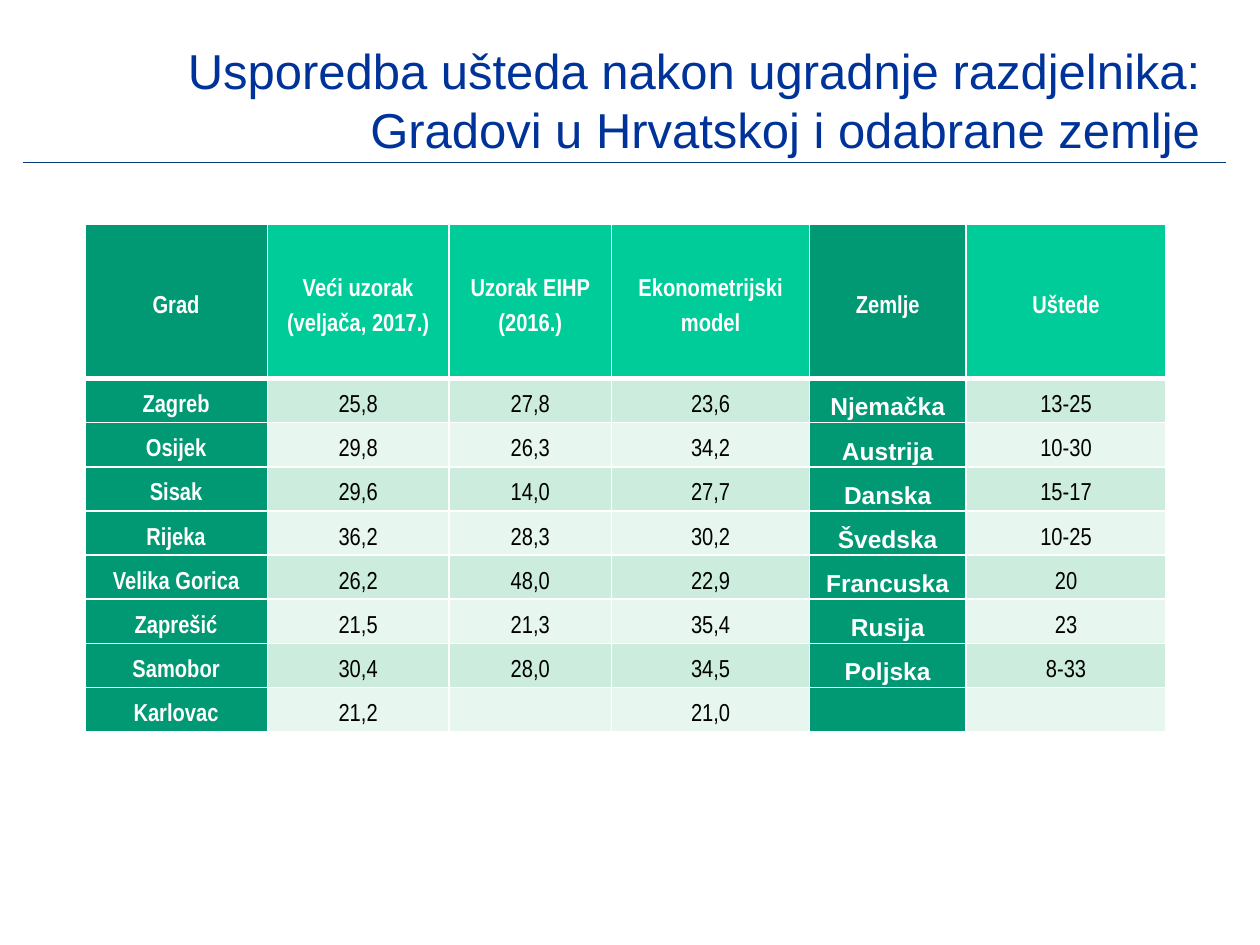
from dataclasses import dataclass

from lxml.etree import SubElement
from pptx import Presentation
from pptx.dml.color import RGBColor
from pptx.enum.shapes import MSO_CONNECTOR as Connector
from pptx.enum.text import MSO_ANCHOR as Anchor, MSO_AUTO_SIZE as AutoSize, PP_ALIGN as Align
from pptx.oxml import parse_xml
from pptx.oxml.ns import nsdecls, qn
from pptx.util import Cm, Pt

WHITE, BLACK = "FFFFFF", "000000"
DARK_GREEN, GREEN = "009973", "00CC99"
BANDS = ("CCECDE", "E7F6EF")
COUNTRY_COLUMN = 4
LABEL_COLUMNS = (0, COUNTRY_COLUMN)
COLUMN_WIDTHS = (3.68, 3.66, 3.28, 3.99, 3.15, 4.04)
HEADER_HEIGHT, ROW_HEIGHT = 3.1, 0.89
SAVINGS = (
    ("Grad", "Veći uzorak (veljača, 2017.)", "Uzorak EIHP (2016.)",
     "Ekonometrijski model", "Zemlje", "Uštede"),
    ("Zagreb", "25,8", "27,8", "23,6", "Njemačka", "13-25"),
    ("Osijek", "29,8", "26,3", "34,2", "Austrija", "10-30"),
    ("Sisak", "29,6", "14,0", "27,7", "Danska", "15-17"),
    ("Rijeka", "36,2", "28,3", "30,2", "Švedska", "10-25"),
    ("Velika Gorica", "26,2", "48,0", "22,9", "Francuska", "20"),
    ("Zaprešić", "21,5", "21,3", "35,4", "Rusija", "23"),
    ("Samobor", "30,4", "28,0", "34,5", "Poljska", "8-33"),
    ("Karlovac", "21,2", "", "21,0", "", ""),
)


@dataclass(frozen=True)
class CellStyle:
    fill: str
    color: str
    bold: bool
    font: str
    bottom: int


def rgb(value: str) -> RGBColor:
    return RGBColor.from_string(value)


def apply(target, values: dict) -> None:
    for name, value in values.items():
        setattr(target, name, value)


def format_font(font, name: str, size: int, color: str, bold: bool) -> None:
    apply(font, {"name": name, "size": Pt(size), "bold": bold})
    font.color.rgb = rgb(color)


def cell_style(row: int, column: int) -> CellStyle:
    header, label = row == 0, column in LABEL_COLUMNS
    strong = header or label
    plain_fill = GREEN if header else BANDS[(row - 1) % 2]
    return CellStyle(
        fill=DARK_GREEN if label else plain_fill,
        color=WHITE if strong else BLACK,
        bold=strong,
        font="Arial" if column == COUNTRY_COLUMN and not header else "Arial Narrow",
        bottom=3 if header else 1,
    )


def add_borders(cell, top: int, bottom: int) -> None:
    properties = cell._tc.get_or_add_tcPr()
    sides = (("lnL", 1), ("lnR", 1), ("lnT", top), ("lnB", bottom))
    for index, (side, width) in enumerate(sides):
        properties.insert(index, parse_xml(
            f'<a:{side} {nsdecls("a")} w="{Pt(width)}"><a:solidFill>'
            f'<a:srgbClr val="{WHITE}"/></a:solidFill></a:{side}>'))


def fill_cell(cell, text: str, style: CellStyle, top: int) -> None:
    apply(cell, {"margin_left": Cm(0.18), "margin_right": Cm(0.18),
                 "margin_top": 0, "margin_bottom": 0,
                 "vertical_anchor": Anchor.MIDDLE})
    cell.fill.solid()
    cell.fill.fore_color.rgb = rgb(style.fill)
    add_borders(cell, top, style.bottom)
    if text:
        paragraph = cell.text_frame.paragraphs[0]
        apply(paragraph, {"alignment": Align.CENTER, "line_spacing": 1.5})
        run = paragraph.add_run()
        run.text = text
        format_font(run.font, style.font, 14, style.color, style.bold)


def add_savings_table(slide) -> None:
    height = HEADER_HEIGHT + ROW_HEIGHT * (len(SAVINGS) - 1)
    table = slide.shapes.add_table(
        len(SAVINGS), len(COLUMN_WIDTHS), Cm(1.71), Cm(4.53),
        Cm(sum(COLUMN_WIDTHS)), Cm(height)).table
    for column, width in zip(table.columns, COLUMN_WIDTHS):
        column.width = Cm(width)
    for row_index, texts in enumerate(SAVINGS):
        table.rows[row_index].height = Cm(ROW_HEIGHT if row_index else HEADER_HEIGHT)
        for column_index, text in enumerate(texts):
            fill_cell(table.cell(row_index, column_index), text,
                      cell_style(row_index, column_index),
                      3 if row_index == 1 else 1)


def add_title(slide, text: str) -> None:
    title = slide.shapes.title
    apply(title, {"left": Cm(0.89), "top": Cm(0.71), "width": Cm(23.55), "height": Cm(2.59)})
    frame = title.text_frame
    apply(frame, {"word_wrap": True, "auto_size": AutoSize.NONE,
                  "vertical_anchor": Anchor.MIDDLE})
    frame.text = text
    paragraph = frame.paragraphs[0]
    paragraph.alignment = Align.RIGHT
    format_font(paragraph.runs[0].font, "Arial", 28, "003399", False)


def add_title_rule(slide) -> None:
    rule = slide.shapes.add_connector(
        Connector.STRAIGHT, Cm(0.46), Cm(3.28), Cm(24.71), Cm(3.28))
    rule.line.color.rgb = rgb("043C77")
    rule.line.width = Pt(0.75)
    SubElement(rule._element.spPr, qn("a:effectLst"))


def main() -> None:
    presentation = Presentation()
    apply(presentation, {"slide_width": Cm(25.4), "slide_height": Cm(19.05)})
    slide = presentation.slides.add_slide(presentation.slide_layouts[5])
    add_title_rule(slide)
    add_title(slide, "Usporedba ušteda nakon ugradnje razdjelnika: "
                     "Gradovi u Hrvatskoj i odabrane zemlje")
    add_savings_table(slide)
    presentation.save("out.pptx")


if __name__ == "__main__":
    main()
